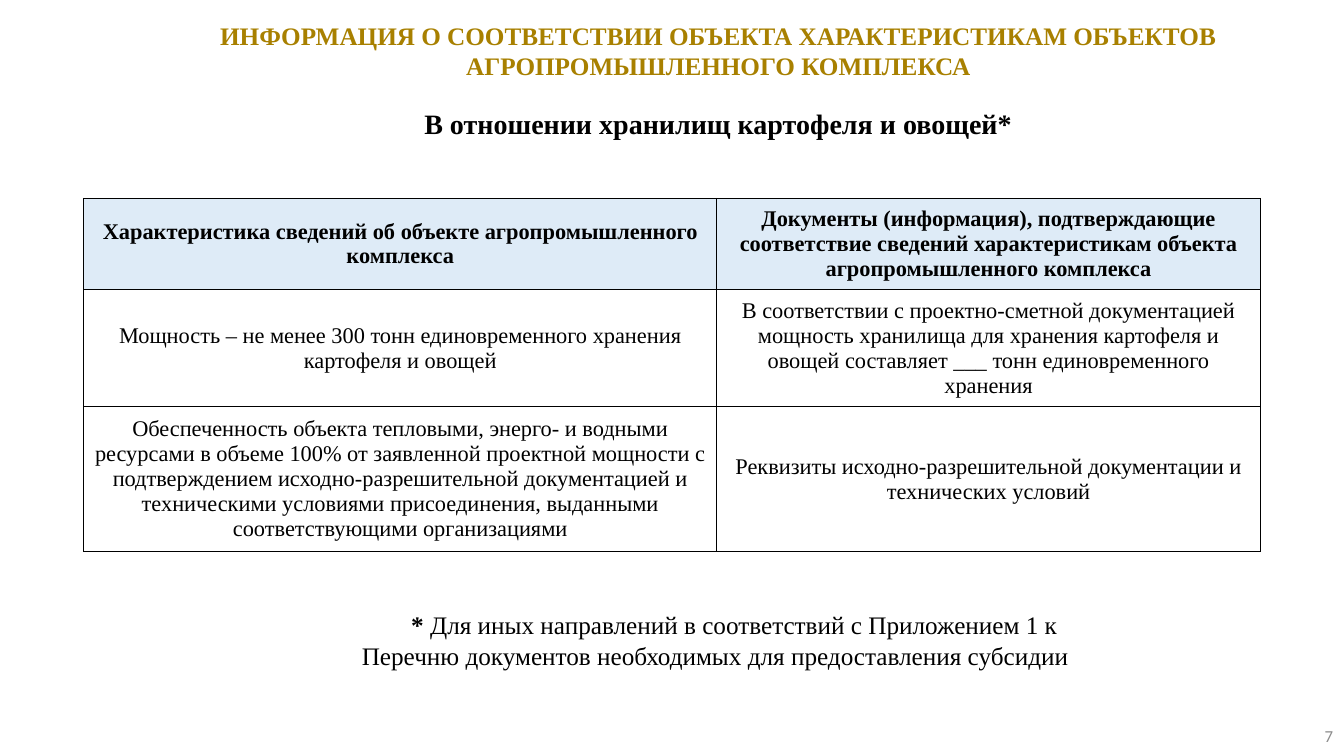
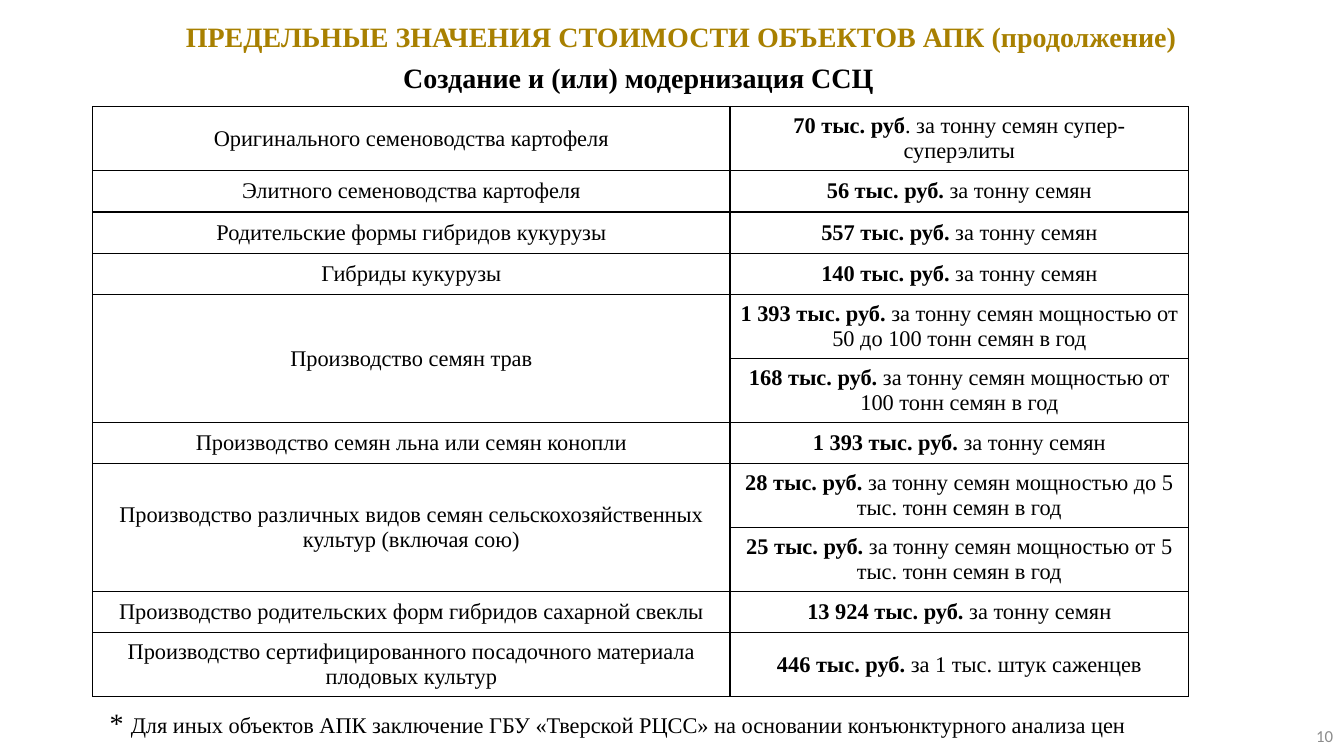
from pptx import Presentation
from pptx.dml.color import RGBColor
from pptx.enum.text import MSO_ANCHOR, MSO_AUTO_SIZE, PP_ALIGN
from pptx.oxml import parse_xml
from pptx.oxml.ns import nsdecls
from pptx.util import Inches, Pt

GOLD = RGBColor(0xA8, 0x80, 0x00)
BLACK = RGBColor(0, 0, 0)
GRAY = RGBColor(0x8C, 0x8C, 0x8C)
WHITE = RGBColor(0xFF, 0xFF, 0xFF)
PALE_BLUE = RGBColor(0xDE, 0xEB, 0xF7)
SERIF = "Times New Roman"
SANS = "Calibri"
CELL_SIZE = 16

SLIDES = [
    {
        "title": ("ИНФОРМАЦИЯ О СООТВЕТСТВИИ ОБЪЕКТА ХАРАКТЕРИСТИКАМ ОБЪЕКТОВ "
                  "АГРОПРОМЫШЛЕННОГО КОМПЛЕКСА", 18, (1.29, 0.19, 11.67, 0.62)),
        "subtitle": ("В отношении хранилищ картофеля и овощей*", (4.11, 1.01, 6.6, 0.44)),
        "table": {
            "at": (0.83, 1.97),
            "cols": (6.28, 5.39),
            "heights": (0.84, 1.09, 1.33),
            "header": True,
            "rows": [
                ("Характеристика сведений об объекте агропромышленного комплекса",
                 "Документы (информация), подтверждающие соответствие сведений "
                 "характеристикам объекта агропромышленного комплекса", ""),
                ("Мощность – не менее 300 тонн единовременного хранения картофеля и овощей",
                 "", "В соответствии с проектно-сметной документацией мощность хранилища "
                 "для хранения картофеля и овощей составляет ___ тонн единовременного хранения"),
                ("Обеспеченность объекта тепловыми, энерго- и водными ресурсами в объеме 100% "
                 "от заявленной проектной мощности с подтверждением исходно-разрешительной "
                 "документацией и техническими условиями присоединения, выданными "
                 "соответствующими организациями",
                 "", "Реквизиты исходно-разрешительной документации и технических условий"),
            ],
        },
        "note": ([("* ", 18, True),
                  ("Для иных направлений в соответствий с Приложением 1 к Перечню документов "
                   "необходимых для предоставления субсидии", 18, False)],
                 (3.49, 6, 7.26, 0.71), 0.49),
        "number": "7",
    },
    {
        "title": ("ПРЕДЕЛЬНЫЕ ЗНАЧЕНИЯ СТОИМОСТИ ОБЪЕКТОВ АПК (продолжение)", 20,
                  (0.92, 0.11, 11.67, 0.5)),
        "subtitle": ("Создание и (или) модернизация ССЦ", (3.9, 0.55, 5.68, 0.44)),
        "table": {
            "at": (0.92, 1.06),
            "cols": (6.32, 4.55),
            "heights": (0.59, 0.41, 0.41, 0.41, 0.59, 0.59, 0.41, 0.59, 0.59, 0.41, 0.59),
            "header": False,
            "rows": [
                ("Оригинального семеноводства картофеля",
                 "70 тыс. руб", ". за тонну семян супер-суперэлиты"),
                ("Элитного семеноводства картофеля", "56 тыс. руб.", " за тонну семян"),
                ("Родительские формы гибридов кукурузы", "557 тыс. руб.", " за тонну семян"),
                ("Гибриды кукурузы", "140 тыс. руб.", " за тонну семян"),
                ("Производство семян трав",
                 "1 393 тыс. руб.", " за тонну семян мощностью от 50 до 100 тонн семян в год"),
                (None, "168 тыс. руб.", " за тонну семян мощностью от 100 тонн семян в год"),
                ("Производство семян льна или семян конопли",
                 "1 393 тыс. руб.", " за тонну семян"),
                ("Производство различных видов семян сельскохозяйственных культур (включая сою)",
                 "28 тыс. руб.", " за тонну семян мощностью до 5 тыс. тонн семян в год"),
                (None, "25 тыс. руб.", " за тонну семян мощностью от 5 тыс. тонн семян в год"),
                ("Производство родительских форм гибридов сахарной свеклы",
                 "13 924 тыс. руб.", " за тонну семян"),
                ("Производство сертифицированного посадочного материала плодовых культур",
                 "446 тыс. руб.", " за 1 тыс. штук саженцев"),
            ],
        },
        "note": ([("* ", 20, False),
                  ("Для иных объектов АПК заключение ГБУ «Тверской РЦСС» на основании "
                   "конъюнктурного анализа цен", 16, False)],
                 (0.99, 6.95, 10.47, 0.44), 0),
        "number": "10",
    },
]


def add_runs(p, runs, color=BLACK, font=SERIF):
    for text, size, bold in runs:
        if text:
            r = p.add_run()
            r.text = text
            r.font.name = font
            r.font.size = Pt(size)
            r.font.bold = bold
            r.font.color.rgb = color


def add_text(s, runs, at, color=BLACK, font=SERIF, align=PP_ALIGN.LEFT, anchor=MSO_ANCHOR.TOP):
    tf = s.shapes.add_textbox(*map(Inches, at)).text_frame
    tf.word_wrap = True
    tf.vertical_anchor = anchor
    p = tf.paragraphs[0]
    p.alignment = align
    add_runs(p, runs, color, font)
    return p


def set_title(s, text, size, at):
    sp = s.shapes.title
    sp.left, sp.top, sp.width, sp.height = map(Inches, at)
    tf = sp.text_frame
    tf.word_wrap = True
    tf.auto_size = MSO_AUTO_SIZE.NONE
    tf.vertical_anchor = MSO_ANCHOR.MIDDLE
    p = tf.paragraphs[0]
    p.alignment = PP_ALIGN.CENTER
    add_runs(p, [(text, size, True)], GOLD)


def format_cell(cell, fill):
    tcPr = cell._tc.get_or_add_tcPr()
    for side in ("lnL", "lnR", "lnT", "lnB"):
        tcPr.append(parse_xml(
            f'<a:{side} {nsdecls("a")} w="{Pt(1)}"><a:solidFill>'
            f'<a:srgbClr val="{BLACK}"/></a:solidFill></a:{side}>'))
    cell.fill.solid()
    cell.fill.fore_color.rgb = fill
    cell.vertical_anchor = MSO_ANCHOR.MIDDLE


def add_grid(s, at, cols, heights, header, rows):
    size = (sum(cols), sum(heights))
    table = s.shapes.add_table(len(rows), len(cols), *map(Inches, at + size)).table
    table.first_row = header
    table.horz_banding = False
    for col, width in zip(table.columns, cols):
        col.width = Inches(width)
    for i, (label, strong, plain) in enumerate(rows):
        table.rows[i].height = Inches(heights[i])
        is_header = header and i == 0
        contents = ([(label, CELL_SIZE, is_header)],
                    [(strong, CELL_SIZE, True), (plain, CELL_SIZE, False)])
        for j, runs in enumerate(contents):
            cell = table.cell(i, j)
            format_cell(cell, PALE_BLUE if is_header else WHITE)
            p = cell.text_frame.paragraphs[0]
            p.alignment = PP_ALIGN.CENTER
            add_runs(p, runs)
        if label is None:
            table.cell(i - 1, 0).merge(table.cell(i, 0))


def main():
    prs = Presentation()
    prs.slide_width, prs.slide_height = Inches(13.33), Inches(7.5)
    for content in SLIDES:
        s = prs.slides.add_slide(prs.slide_layouts[5])
        set_title(s, *content["title"])
        subtitle, at = content["subtitle"]
        add_text(s, [(subtitle, 20, True)], at)
        add_grid(s, **content["table"])
        runs, at, indent = content["note"]
        p = add_text(s, runs, at)
        p._p.get_or_add_pPr().set("indent", str(Inches(indent)))
        add_text(s, [(content["number"], 12, False)], (10.32, 7.1, 3, 0.4),
                 GRAY, SANS, PP_ALIGN.RIGHT, MSO_ANCHOR.MIDDLE)
    prs.save("out.pptx")


if __name__ == "__main__":
    main()
